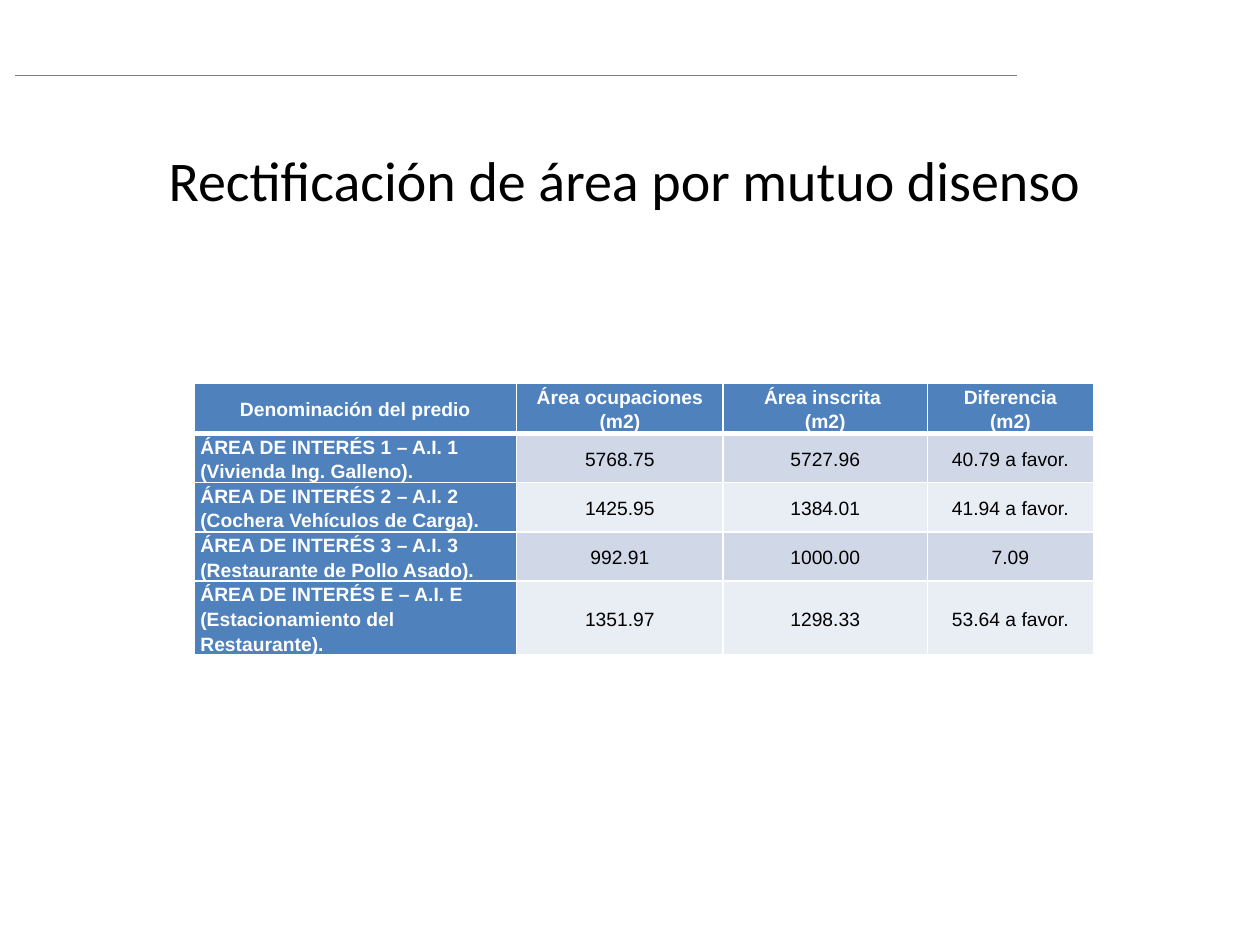
import pptx
import pptx.util
import pptx.dml.color
import pptx.enum.shapes
import pptx.enum.text
import pptx.oxml
import pptx.oxml.ns

Inches, Pt = pptx.util.Inches, pptx.util.Pt
ALIGN, ANCHOR = pptx.enum.text.PP_ALIGN, pptx.enum.text.MSO_ANCHOR

# Content: a newline starts a new paragraph
TITLE = "Rectificación de área por mutuo disenso"
ROWS = [
    ("Denominación del predio", "Área ocupaciones (m2)", "Área inscrita \n(m2)", "Diferencia\n(m2)"),
    ("ÁREA DE INTERÉS 1 – A.I. 1 (Vivienda Ing. Galleno).", "5768.75", "5727.96", "40.79 a favor."),
    ("ÁREA DE INTERÉS 2 – A.I. 2 (Cochera Vehículos de Carga).", "1425.95", "1384.01", "41.94 a favor."),
    ("ÁREA DE INTERÉS 3 – A.I. 3 (Restaurante de Pollo Asado).", "992.91", "1000.00", "7.09"),
    ("ÁREA DE INTERÉS E – A.I. E\n(Estacionamiento del Restaurante).", "1351.97", "1298.33", "53.64 a favor."),
]

# Layout in inches
TITLE_BOX = (0.51, 0.91, 8.9, 1.02)
TABLE_BOX = (1.54, 3.04, 7.14, 2.05)
COL_WIDTHS = (2.56, 1.64, 1.62, 1.32)
ROW_HEIGHTS = (0.4,) + (0.2,) * 4
RULE_LEFT, RULE_RIGHT, RULE_Y = 0.12, 8.07, 0.6

BLACK, WHITE, GRAY, BLUE = "000000", "FFFFFF", "808080", "4F81BD"
BANDS = ("E9EDF4", "D0D8E8")
CELL_FORMAT = {"margin_left": Inches(0.05), "margin_right": Inches(0.05),
               "margin_top": 0, "margin_bottom": 0}


def rgb(hex_color):
    return pptx.dml.color.RGBColor.from_string(hex_color)


def set_all(obj, values):
    for name, value in values.items():
        setattr(obj, name, value)


def set_font(font, name, size, color, bold=False):
    set_all(font, {"name": name, "size": Pt(size), "bold": bold})
    font.color.rgb = rgb(color)


def set_borders(cell, widths):
    tc_pr = cell._tc.get_or_add_tcPr()
    for i, (side, width) in enumerate(widths.items()):
        tc_pr.insert(i, pptx.oxml.parse_xml(
            f'<a:ln{side} {pptx.oxml.ns.nsdecls("a")} w="{Pt(width)}"><a:solidFill>'
            f'<a:srgbClr val="{WHITE}"/></a:solidFill></a:ln{side}>'))


def fill_cell(cell, text, row, col):
    is_header, is_label = row == 0, row > 0 and col == 0
    strong = is_header or is_label
    set_all(cell, CELL_FORMAT)
    cell.vertical_anchor = ANCHOR.BOTTOM if is_label else ANCHOR.MIDDLE
    cell.fill.solid()
    cell.fill.fore_color.rgb = rgb(BLUE if strong else BANDS[row % 2])
    cell.text_frame.text = text
    for p in cell.text_frame.paragraphs:
        p.alignment = ALIGN.LEFT if is_label else ALIGN.CENTER
        p.line_spacing = 1.15
        for r in p.runs:
            set_font(r.font, "Arial", 11, WHITE if strong else BLACK, strong)
    set_borders(cell, {"L": 1, "R": 1, "T": 3 if row == 1 else 1, "B": 3 if is_header else 1})


prs = pptx.Presentation()
prs.slide_width, prs.slide_height = Inches(10), Inches(7.5)
s = prs.slides.add_slide(prs.slide_layouts[5])

# Rule at the top
rule = s.shapes.add_connector(pptx.enum.shapes.MSO_CONNECTOR.STRAIGHT, Inches(RULE_RIGHT),
                              Inches(RULE_Y), Inches(RULE_LEFT), Inches(RULE_Y))
rule.line.color.rgb = rgb(GRAY)
rule.line.width = Pt(0.75)
rule._element.spPr.append(pptx.oxml.parse_xml(f'<a:effectLst {pptx.oxml.ns.nsdecls("a")}/>'))

# Title
title = s.shapes.title
set_all(title, dict(zip(("left", "top", "width", "height"), map(Inches, TITLE_BOX))))
tf = title.text_frame
tf.text = TITLE
tf.vertical_anchor = ANCHOR.MIDDLE
p = tf.paragraphs[0]
p.alignment = ALIGN.CENTER
set_font(p.runs[0].font, "Calibri", 32, BLACK)

# Table of areas
frame = s.shapes.add_table(len(ROWS), len(COL_WIDTHS), *map(Inches, TABLE_BOX))
table = frame.table
table.first_col = True
for column, width in zip(table.columns, COL_WIDTHS):
    column.width = Inches(width)
for table_row, height in zip(table.rows, ROW_HEIGHTS):
    table_row.height = Inches(height)
frame.height = Inches(TABLE_BOX[3])
for i, values in enumerate(ROWS):
    for j, text in enumerate(values):
        fill_cell(table.cell(i, j), text, i, j)

prs.save("out.pptx")
